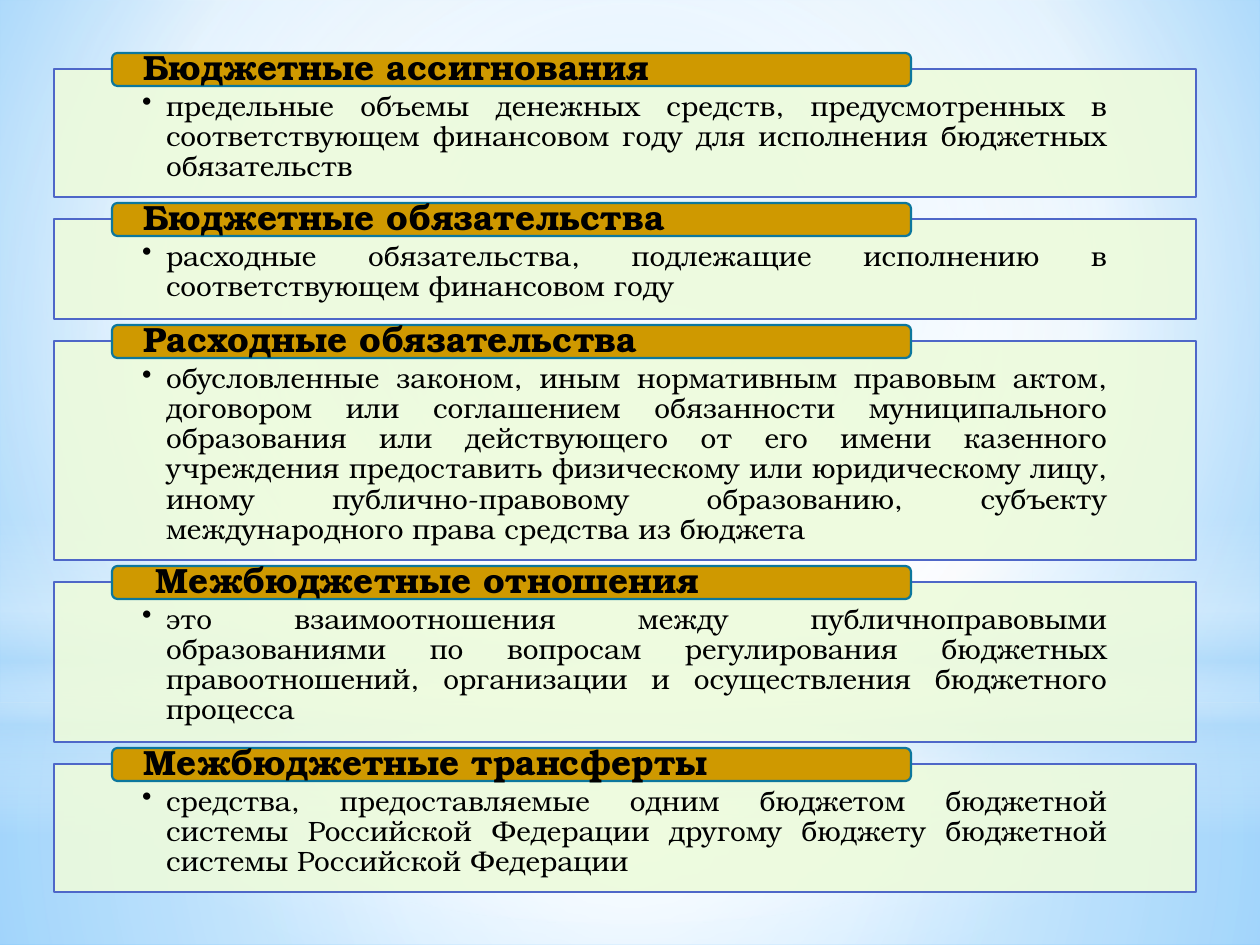
from lxml import etree
from pptx import Presentation
from pptx.dml.color import RGBColor
from pptx.enum.shapes import MSO_SHAPE
from pptx.enum.text import MSO_ANCHOR, PP_ALIGN
from pptx.oxml.ns import qn
from pptx.util import Pt

RECT, ROUND, OVAL = MSO_SHAPE.RECTANGLE, MSO_SHAPE.ROUNDED_RECTANGLE, MSO_SHAPE.OVAL
TOP, MIDDLE = MSO_ANCHOR.TOP, MSO_ANCHOR.MIDDLE
LEFT, JUSTIFY = PP_ALIGN.LEFT, PP_ALIGN.JUSTIFY

PX = 914400 / 126
WIDTH, HEIGHT = 1260, 945
CENTRE = (50, 50, 50, 50)
COLORS = {
    "white": "FFFFFF", "sky": "B4DCFA", "bg_in": "9ED5FF", "bg_out": "5BB9FF",
    "panel": "EDFBDC", "panel_line": "4E67C8",
    "tab": "CF9900", "tab_line": "0C779D", "text": "000000",
}


def px(n):
    return round(n * PX)


class Deck:
    """Holds the style and the current slide."""
    font = "TeX Gyre Bonum"
    line_width = Pt(1.25)

    def __init__(self):
        self.prs = Presentation()
        self.prs.slide_width, self.prs.slide_height = px(WIDTH), px(HEIGHT)
        self.s = self.prs.slides.add_slide(self.prs.slide_layouts[6])

    def color(self, name):
        return RGBColor.from_string(COLORS[name])

    def gradient(self, fill, element, stops, focus=None):
        """Stops are (position, colour, opacity); without a focus it runs downwards."""
        fill.gradient()
        grad = element.find(".//" + qn("a:gradFill"))
        for child in list(grad):
            grad.remove(child)
        gs_list = etree.SubElement(grad, qn("a:gsLst"))
        for pos, name, opacity in stops:
            gs = etree.SubElement(gs_list, qn("a:gs"), pos=str(pos * 1000))
            clr = etree.SubElement(gs, qn("a:srgbClr"), val=COLORS[name])
            if opacity < 100:
                etree.SubElement(clr, qn("a:alpha"), val=str(opacity * 1000))
        if focus:
            path = etree.SubElement(grad, qn("a:path"), path="circle")
            sides = {k: str(v * 1000) for k, v in zip("ltrb", focus)}
            etree.SubElement(path, qn("a:fillToRect"), **sides)
        else:
            etree.SubElement(grad, qn("a:lin"), ang="5400000", scaled="0")

    def background(self, stops, focus):
        self.gradient(self.s.background.fill, self.s.element, stops, focus)

    def shape(self, kind, x, y, w, h):
        sp = self.s.shapes.add_shape(kind, px(x), px(y), px(w), px(h))
        sp.shadow.inherit = False
        return sp

    def glow(self, kind, y, h, stops, focus=None):
        sp = self.shape(kind, 0, y, WIDTH, h)
        self.gradient(sp.fill, sp.element, stops, focus)
        sp.line.fill.background()

    def box(self, kind, x, y, w, h, fill, line, opacity=100):
        sp = self.shape(kind, x, y, w, h)
        sp.fill.solid()
        sp.fill.fore_color.rgb = self.color(fill)
        if opacity < 100:
            clr = sp.element.spPr.find(qn("a:solidFill"))[0]
            etree.SubElement(clr, qn("a:alpha"), val=str(opacity * 1000))
        sp.line.color.rgb = self.color(line)
        sp.line.width = self.line_width
        return sp

    def text(self, sp, words, size, align, anchor, insets, bold=False):
        tf = sp.text_frame
        tf.word_wrap = True
        tf.vertical_anchor = anchor
        (tf.margin_left, tf.margin_top,
         tf.margin_right, tf.margin_bottom) = map(px, insets)
        p = tf.paragraphs[0]
        p.alignment, p.line_spacing = align, 0.9
        r = p.add_run()
        r.text = words
        r.font.name, r.font.size, r.font.bold = self.font, Pt(size), bold
        r.font.color.rgb = self.color("text")
        return p

    def bullet(self, p, indent):
        pPr = p._p.get_or_add_pPr()
        pPr.set("marL", str(px(indent)))
        pPr.set("indent", str(-px(indent)))
        etree.SubElement(pPr, qn("a:buChar"), char="•")

    def panel(self, y, h, words):
        sp = self.box(RECT, 54, y, 1142, h, "panel", "panel_line", 90)
        p = self.text(sp, words, 16, JUSTIFY, TOP, (88, 23, 88, 15))
        self.bullet(p, 24)

    def tab(self, y, words):
        sp = self.box(ROUND, 112, y, 799, 33, "tab", "tab_line")
        self.text(sp, words, 20, LEFT, MIDDLE, (30, 0, 30, 0), bold=True)


# Term, definition, panel height
TERMS = [
    ("Бюджетные ассигнования",
     "предельные объемы денежных средств, предусмотренных в соответствующем "
     "финансовом году для исполнения бюджетных обязательств", 128),
    ("Бюджетные обязательства",
     "расходные обязательства, подлежащие исполнению в соответствующем "
     "финансовом году", 100),
    ("Расходные обязательства",
     "обусловленные законом, иным нормативным правовым актом, договором или "
     "соглашением обязанности муниципального образования или действующего от "
     "его имени казенного учреждения предоставить физическому или юридическому "
     "лицу, иному публично-правовому образованию, субъекту международного "
     "права средства из бюджета", 219),
    (" Межбюджетные отношения",
     "это взаимоотношения между публичноправовыми образованиями по вопросам "
     "регулирования бюджетных правоотношений, организации и осуществления "
     "бюджетного процесса", 160),
    ("Межбюджетные трансферты",
     "средства, предоставляемые одним бюджетом бюджетной системы Российской "
     "Федерации другому бюджету бюджетной системы Российской Федерации", 128),
]
FIRST_TOP, GAP, TAB_RISE = 69, 22, 16


def main():
    deck = Deck()

    # Sky backdrop
    deck.background([(0, "bg_in", 100), (60, "white", 100), (100, "bg_out", 100)],
                    (20, 10, 20, 60))
    deck.glow(RECT, 703, 242,
              [(0, "white", 91), (37, "white", 76), (100, "sky", 79)], CENTRE)
    deck.glow(RECT, 0, 703,
              [(0, "white", 89), (48, "white", 62), (100, "sky", 79)], CENTRE)
    deck.glow(RECT, 519, 315,
              [(0, "white", 0), (29, "white", 30), (45, "sky", 40),
               (55, "white", 26), (65, "sky", 60), (100, "white", 0)])
    deck.glow(OVAL, 220, 703, [(0, "white", 100), (56, "white", 0)], CENTRE)

    # Definitions, each with its title tab over the top edge
    y = FIRST_TOP
    for term, definition, height in TERMS:
        deck.panel(y, height, definition)
        deck.tab(y - TAB_RISE, term)
        y += height + GAP

    deck.prs.save("out.pptx")


if __name__ == "__main__":
    main()
